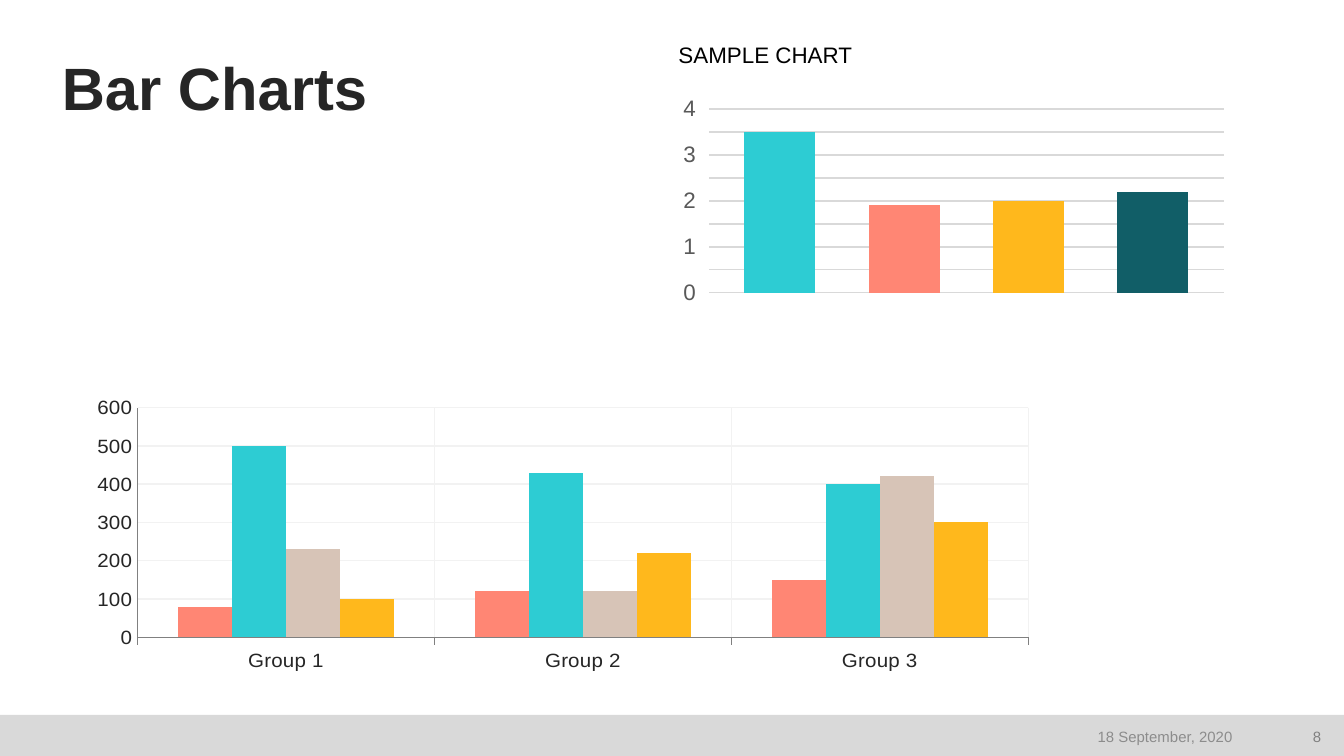
from dataclasses import dataclass
from typing import Optional

from lxml import etree
from pptx import Presentation
from pptx import util as u
from pptx.chart.data import CategoryChartData
from pptx.dml.color import RGBColor
from pptx.enum import chart as ch, shapes, text
from pptx.oxml.ns import qn

FONT = "Arial"
TEAL, CORAL, AMBER, PINE, SAND = "2DCCD3", "FF8674", "FFB81C", "115E67", "D7C4B7"
INK, GREY = "262626", "D9D9D9"


@dataclass
class Box:
    left: float
    top: float
    width: float
    height: float

    def emu(self) -> list:
        return [u.Inches(v) for v in (self.left, self.top, self.width, self.height)]


@dataclass
class Label:
    words: str
    box: Box
    size: float
    color: str
    align: text.PP_ALIGN = text.PP_ALIGN.LEFT
    anchor: text.MSO_ANCHOR = text.MSO_ANCHOR.TOP


@dataclass
class Bars:
    color: str
    values: tuple


@dataclass
class BarChart:
    box: Box
    categories: tuple
    bars: list
    size: float
    color: str
    gap: int
    overlap: int
    top_value: float
    step: float
    grid: str
    plot: Optional[Box] = None  # inner plot area, as fractions of the chart


def rgb(color: str) -> RGBColor:
    return RGBColor.from_string(color)


def set_font(font, size: float, color: str, bold: bool = False) -> None:
    font.name, font.size, font.bold = FONT, u.Pt(size), bold
    font.color.rgb = rgb(color)


def set_line(line, color: str) -> None:
    line.color.rgb = rgb(color)
    line.width = u.Pt(0.75)


def add_label(slide, label: Label) -> None:
    frame = slide.shapes.add_textbox(*label.box.emu()).text_frame
    frame.word_wrap = True
    frame.vertical_anchor = label.anchor
    paragraph = frame.paragraphs[0]
    paragraph.text = label.words
    paragraph.alignment = label.align
    set_font(paragraph.font, label.size, label.color)


def place_plot(chart, plot: Box) -> None:
    area = chart._chartSpace.chart.plotArea
    for old in area.findall(qn("c:layout")):
        area.remove(old)
    layout = etree.Element(qn("c:layout"))
    manual = etree.SubElement(layout, qn("c:manualLayout"))
    settings = {"layoutTarget": "inner", "xMode": "edge", "yMode": "edge",
                "x": plot.left, "y": plot.top, "w": plot.width, "h": plot.height}
    for tag, value in settings.items():
        etree.SubElement(manual, qn(f"c:{tag}")).set("val", str(value))
    area.insert(0, layout)


def add_bar_chart(slide, spec: BarChart):
    data = CategoryChartData()
    data.categories = spec.categories
    for number, bars in enumerate(spec.bars, 1):
        data.add_series(f"Series {number}", bars.values)
    chart = slide.shapes.add_chart(
        ch.XL_CHART_TYPE.COLUMN_CLUSTERED, *spec.box.emu(), data).chart
    chart.has_title = chart.has_legend = False
    set_font(chart.font, spec.size, spec.color)

    plot = chart.plots[0]
    plot.vary_by_categories = False
    plot.gap_width, plot.overlap = spec.gap, spec.overlap
    for series, bars in zip(plot.series, spec.bars):
        series.format.fill.solid()
        series.format.fill.fore_color.rgb = rgb(bars.color)

    scale = chart.value_axis
    scale.minimum_scale, scale.maximum_scale = 0, spec.top_value
    scale.major_unit = spec.step
    scale.has_major_gridlines = True
    set_line(scale.major_gridlines.format.line, spec.grid)
    if spec.plot:
        place_plot(chart, spec.plot)
    return chart


prs = Presentation()
prs.slide_width = u.Inches(10)
prs.slide_height = prs.slide_width * 9 // 16
slide = prs.slides.add_slide(prs.slide_layouts[5])

# Footer band
band = slide.shapes.add_shape(shapes.MSO_SHAPE.RECTANGLE, *Box(0, 5.32, 10, 0.31).emu())
band.shadow.inherit = False
band.fill.solid()
band.fill.fore_color.rgb = rgb(GREY)
band.line.fill.background()

# Title
title = slide.shapes.title
title.left, title.top, title.width, title.height = Box(0.46, 0.4, 9.1, 0.52).emu()
heading = title.text_frame
heading.margin_left = heading.margin_right = heading.margin_top = heading.margin_bottom = 0
heading.vertical_anchor = text.MSO_ANCHOR.BOTTOM
heading.text = "Bar Charts"
heading.paragraphs[0].alignment = text.PP_ALIGN.LEFT
heading.paragraphs[0].line_spacing = 0.9
set_font(heading.paragraphs[0].font, 32, INK, bold=True)

# Sample chart
sample = add_bar_chart(slide, BarChart(
    Box(5, 0.69, 4.19, 1.61), ("1",),
    [Bars(TEAL, (3.5,)), Bars(CORAL, (1.9,)), Bars(AMBER, (2,)), Bars(PINE, (2.2,))],
    size=12, color="595959", gap=100, overlap=-75, top_value=4, step=0.5, grid=GREY))
sample.category_axis.visible = False
sample.value_axis.format.line.fill.background()

# Grouped chart
grouped = add_bar_chart(slide, BarChart(
    Box(0.59, 2.95, 7.23, 2.05), ("Group 1", "Group 2", "Group 3"),
    [Bars(CORAL, (80, 120, 150)), Bars(TEAL, (500, 430, 400)),
     Bars(SAND, (230, 120, 420)), Bars(AMBER, (100, 220, 300))],
    size=11, color=INK, gap=150, overlap=0, top_value=600, step=100, grid="F2F2F2",
    plot=Box(0.06, 0.02, 11 / 12, 0.89)))
groups = grouped.category_axis
groups.has_major_gridlines = True
set_line(groups.major_gridlines.format.line, "F2F2F2")
groups.major_tick_mark = ch.XL_TICK_MARK.OUTSIDE
grouped.value_axis.major_tick_mark = ch.XL_TICK_MARK.NONE
for axis in (groups, grouped.value_axis):
    set_line(axis.format.line, "808080")

# Chart caption, date and page number
RIGHT, MIDDLE = text.PP_ALIGN.RIGHT, text.MSO_ANCHOR.MIDDLE
for label in (
    Label("SAMPLE CHART", Box(4.95, 0.26, 1.84, 0.3), 12, "000000"),
    Label("18 September, 2020", Box(7.02, 5.35, 2.25, 0.26), 8, "8C8C8C", RIGHT, MIDDLE),
    Label("8", Box(9.56, 5.35, 0.37, 0.26), 8, "808080", RIGHT, MIDDLE),
):
    add_label(slide, label)

prs.save("out.pptx")
